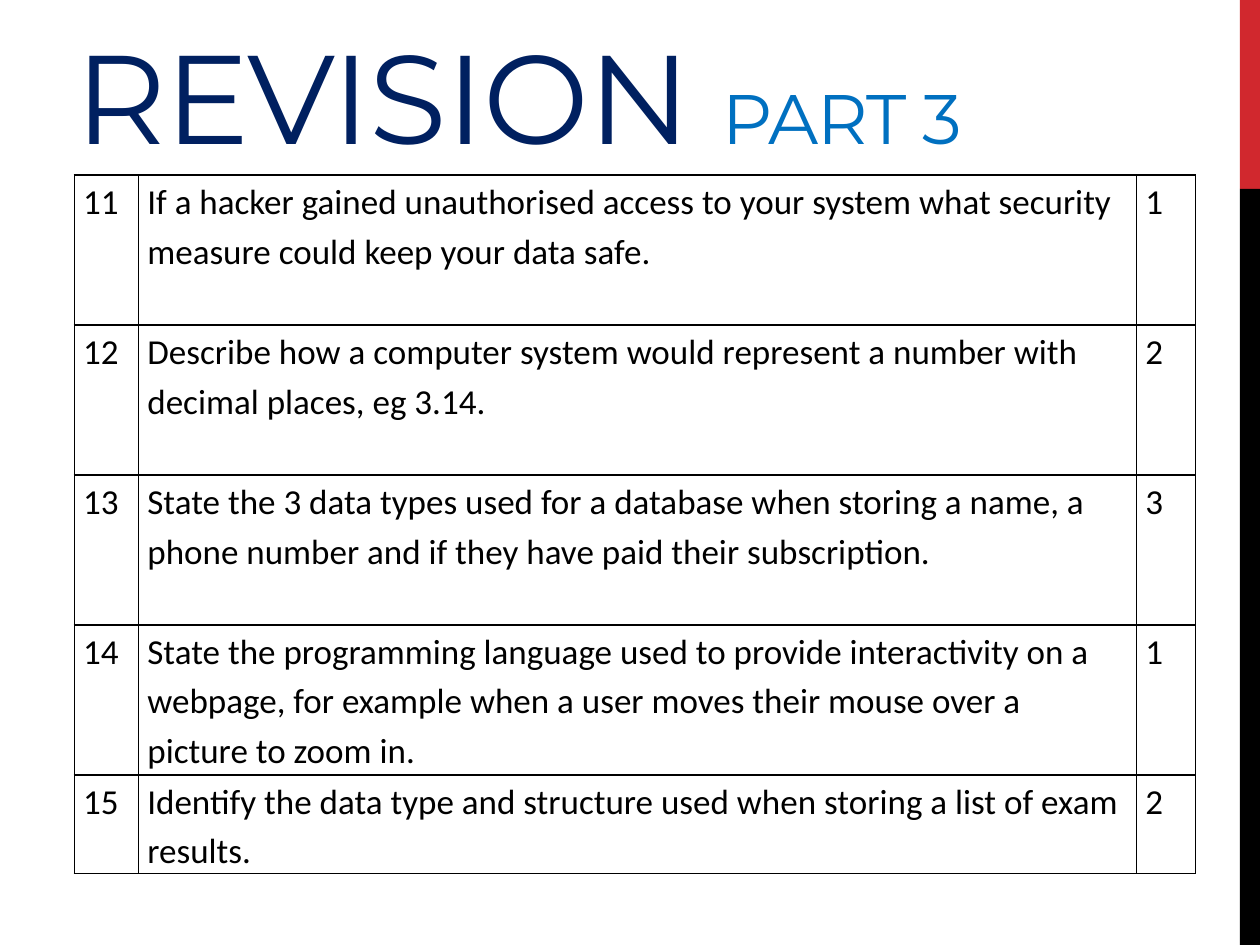
from lxml.etree import SubElement
from pptx import Presentation
from pptx.dml.color import RGBColor
from pptx.enum.shapes import MSO_SHAPE as Shape
from pptx.enum.text import MSO_ANCHOR as Anchor, MSO_AUTO_SIZE as Fit, PP_ALIGN as Align
from pptx.oxml.ns import qn
from pptx.util import Inches, Pt

RED = RGBColor(0xD1, 0x28, 0x2E)
BLACK = RGBColor(0, 0, 0)
NAVY = RGBColor(0x00, 0x20, 0x60)
BLUE = RGBColor(0x00, 0x70, 0xC0)

COLS = [0.51, 7.92, 0.47]
ROWS = [1.19] * 4 + [0.77]
FIRST = 11
TASKS = [
    ("If a hacker gained unauthorised access to your system what security measure could keep your data safe.", 1),
    ("Describe how a computer system would represent a number with decimal places, eg 3.14.", 2),
    ("State the 3 data types used for a database when storing a name, a phone number and if they have paid their subscription.", 3),
    ("State the programming language used to provide interactivity on a webpage, for example when a user moves their mouse over a picture to zoom in.", 1),
    ("Identify the data type and structure used when storing a list of exam results.", 2),
]


def style(run, font, size, color):
    run.font.name = font
    run.font.size = Pt(size)
    run.font.bold = False
    run.font.color.rgb = color


def add_bar(slide, top, height, color):
    bar = slide.shapes.add_shape(
        Shape.RECTANGLE, Inches(9.84), Inches(top), Inches(0.16), Inches(height))
    bar.shadow.inherit = False
    bar.fill.solid()
    bar.fill.fore_color.rgb = color
    bar.line.fill.background()


def set_title(slide):
    title = slide.shapes.title
    title.left, title.top = Inches(0.5), Inches(0.05)
    title.width, title.height = Inches(8.59), Inches(1.3)
    frame = title.text_frame
    frame.auto_size = Fit.NONE
    frame.word_wrap = True
    frame.vertical_anchor = Anchor.BOTTOM
    frame.margin_bottom = 0
    para = frame.paragraphs[0]
    para.alignment = Align.LEFT
    for text, size, color in [("REVISION ", 72, NAVY), ("PART 3", 40, BLUE)]:
        run = para.add_run()
        run.text = text
        style(run, "Montserrat", size, color)
        run.font._element.set("spc", "-60")


def add_edges(cell):
    props = cell._tc.get_or_add_tcPr()
    for spot, side in enumerate(["lnL", "lnR", "lnT", "lnB"]):
        edge = SubElement(props, qn(f"a:{side}"), w=str(Pt(1)))
        fill = SubElement(edge, qn("a:solidFill"))
        SubElement(fill, qn("a:srgbClr"), val=str(BLACK))
        props.insert(spot, edge)


def fill_cell(cell, text):
    cell.fill.background()
    cell.margin_left = cell.margin_right = Inches(0.07)
    cell.margin_top = cell.margin_bottom = 0
    cell.vertical_anchor = Anchor.TOP
    cell.text_frame.text = text
    para = cell.text_frame.paragraphs[0]
    para.line_spacing = 1.15
    style(para.runs[0], "Calibri", 20, BLACK)
    add_edges(cell)


def add_tasks(slide):
    table = slide.shapes.add_table(
        len(ROWS), len(COLS), Inches(0.59), Inches(1.39),
        Inches(sum(COLS)), Inches(sum(ROWS))).table
    table.first_row = table.horz_banding = False
    for col, width in zip(table.columns, COLS):
        col.width = Inches(width)
    for row, height in zip(table.rows, ROWS):
        row.height = Inches(height)
    for num, (task, marks) in enumerate(TASKS):
        for col, text in enumerate([str(FIRST + num), task, str(marks)]):
            fill_cell(table.cell(num, col), text)


def main():
    deck = Presentation()
    deck.slide_width, deck.slide_height = Inches(10), Inches(7.5)
    slide = deck.slides.add_slide(deck.slide_layouts[5])
    add_bar(slide, 0, 1.5, RED)
    add_bar(slide, 1.5, 6, BLACK)
    set_title(slide)
    add_tasks(slide)
    deck.save("out.pptx")


if __name__ == "__main__":
    main()
